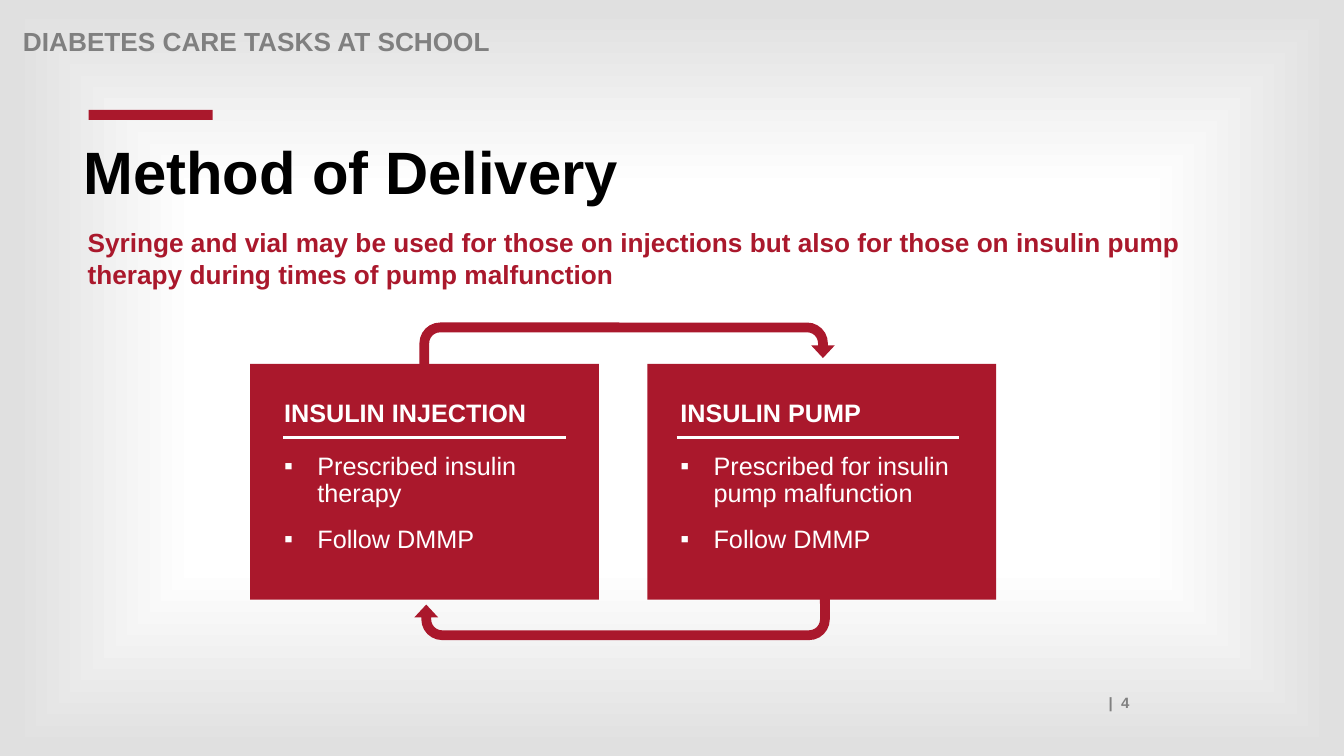
from dataclasses import dataclass

from lxml import etree
from pptx import Presentation
from pptx.dml.color import RGBColor
from pptx.enum.shapes import MSO_CONNECTOR, MSO_SHAPE as Preset
from pptx.enum.text import PP_ALIGN as Align
from pptx.oxml import parse_xml
from pptx.oxml.ns import nsdecls, qn
from pptx.shapes.autoshape import Shape
from pptx.slide import Slide
from pptx.util import Inches, Pt

RED = "AA182C"
GREY = "808080"
WHITE = "FFFFFF"
BLACK = "000000"
FONT = "Arial"
CARD_TOP, CARD_WIDTH, CARD_HEIGHT = 3.61, 3.46, 2.34
RULE_TOP, RULE_WIDTH = 4.34, 2.8
BULLET_INDENT = 0.33
ARROW_ADJUSTMENTS = (0.207, 0.25, 0.269, 0.438, 0.75)
BACKGROUND_STOPS = ((12, WHITE), (50, WHITE), (98, "E0E0E0"))


@dataclass(frozen=True)
class Card:
    left: float
    text_left: float
    rule_left: float
    text_width: float
    heading: str
    bullets: tuple[str, ...]


@dataclass(frozen=True)
class Arrow:
    left: float
    top: float
    rotation: float


CARDS = (
    Card(2.48, 2.72, 2.81, 3.03, "INSULIN INJECTION",
         ("Prescribed insulin therapy", "Follow DMMP")),
    Card(6.42, 6.65, 6.71, 3.17, "INSULIN PUMP",
         ("Prescribed for insulin pump malfunction", "Follow DMMP")),
)
ARROWS = (Arrow(4.16, 3.2, 0), Arrow(4.11, 5.88, 180))


def color(code: str) -> RGBColor:
    return RGBColor.from_string(code)


def paint_background(page: Slide) -> None:
    """Fill the page with a gradient that darkens from the centre outwards."""
    page.background.fill.solid()
    stops = "".join(
        f'<a:gs pos="{percent * 1000}"><a:srgbClr val="{code}"/></a:gs>'
        for percent, code in BACKGROUND_STOPS
    )
    gradient = parse_xml(
        f'<a:gradFill {nsdecls("a")} rotWithShape="1"><a:gsLst>{stops}</a:gsLst>'
        '<a:path path="shape"><a:fillToRect l="50000" t="50000" r="50000" b="50000"/>'
        "</a:path></a:gradFill>"
    )
    solid = next(page.background._cSld.iter(qn("a:solidFill")))
    solid.getparent().replace(solid, gradient)


def add_text(page: Slide, left: float, top: float, width: float, height: float,
             *lines: str, size: float = 18, fill: str = WHITE, bold: bool = True,
             align: Align = Align.LEFT, spacing: float = 0.9, before: float = 13.3,
             inset: bool = True, bullet: str = "") -> None:
    box = page.shapes.add_textbox(Inches(left), Inches(top), Inches(width), Inches(height))
    frame = box.text_frame
    frame.word_wrap = True
    if not inset:
        frame.margin_left = frame.margin_right = 0
        frame.margin_top = frame.margin_bottom = 0
    for index, line in enumerate(lines):
        para = frame.add_paragraph() if index else frame.paragraphs[0]
        para.alignment = align
        para.line_spacing = spacing
        para.space_before = Pt(before)
        span = para.add_run()
        span.text = line
        span.font.name = FONT
        span.font.size = Pt(size)
        span.font.bold = bold
        span.font.color.rgb = color(fill)
        if bullet:
            properties = para._p.get_or_add_pPr()
            properties.set("marL", str(Inches(BULLET_INDENT)))
            properties.set("indent", str(-Inches(BULLET_INDENT)))
            etree.SubElement(properties, qn("a:buFont"), typeface=FONT)
            etree.SubElement(properties, qn("a:buChar"), char=bullet)


def add_red_shape(page: Slide, preset: Preset, left: float, top: float,
                  width: float, height: float) -> Shape:
    shape = page.shapes.add_shape(
        preset, Inches(left), Inches(top), Inches(width), Inches(height))
    shape.shadow.inherit = False
    shape.fill.solid()
    shape.fill.fore_color.rgb = color(RED)
    shape.line.fill.background()
    return shape


def add_rule(page: Slide, left: float) -> None:
    """Draw the white line under a card heading."""
    rule = page.shapes.add_connector(
        MSO_CONNECTOR.STRAIGHT, Inches(left), Inches(RULE_TOP),
        Inches(left + RULE_WIDTH), Inches(RULE_TOP))
    rule.line.color.rgb = color(WHITE)
    rule.line.width = Pt(2)
    etree.SubElement(rule._element.spPr, qn("a:effectLst"))


def add_card(page: Slide, card: Card) -> None:
    add_red_shape(page, Preset.RECTANGLE, card.left, CARD_TOP, CARD_WIDTH, CARD_HEIGHT)
    add_text(page, card.text_left, 3.93, 2.66, 0.41, card.heading)
    add_text(page, card.text_left, 4.45, card.text_width, 0.92, *card.bullets,
             bold=False, bullet="▪")
    add_rule(page, card.rule_left)


def add_arrow(page: Slide, arrow: Arrow) -> None:
    shape = add_red_shape(page, Preset.U_TURN_ARROW, arrow.left, arrow.top, 4.12, 0.47)
    shape.rotation = arrow.rotation
    for index, value in enumerate(ARROW_ADJUSTMENTS):
        shape.adjustments[index] = value


def main() -> None:
    deck = Presentation()
    deck.slide_width, deck.slide_height = Inches(13.33), Inches(7.5)
    page = deck.slides.add_slide(deck.slide_layouts[6])
    paint_background(page)

    add_text(page, 1.21, 6.83, 10.09, 0.28, "|  4", size=10.7, fill=GREY,
             align=Align.RIGHT, spacing=1.0, before=0)
    add_text(page, 0.13, 0.24, 11, 0.28, "DIABETES CARE TASKS AT SCHOOL",
             size=18.7, fill=GREY)
    add_red_shape(page, Preset.RECTANGLE, 0.88, 1.09, 1.23, 0.1)
    add_text(page, 0.87, 2.25, 11.47, 0.63,
             "Syringe and vial may be used for those on injections but also for those "
             "on insulin pump therapy during times of pump malfunction",
             size=18.7, fill=RED, spacing=1.0, inset=False)
    add_text(page, 0.73, 1.37, 11.03, 0.95, "Method of Delivery", size=42.7, fill=BLACK)

    for card in CARDS:
        add_card(page, card)
    for arrow in ARROWS:
        add_arrow(page, arrow)
    deck.save("out.pptx")


if __name__ == "__main__":
    main()
